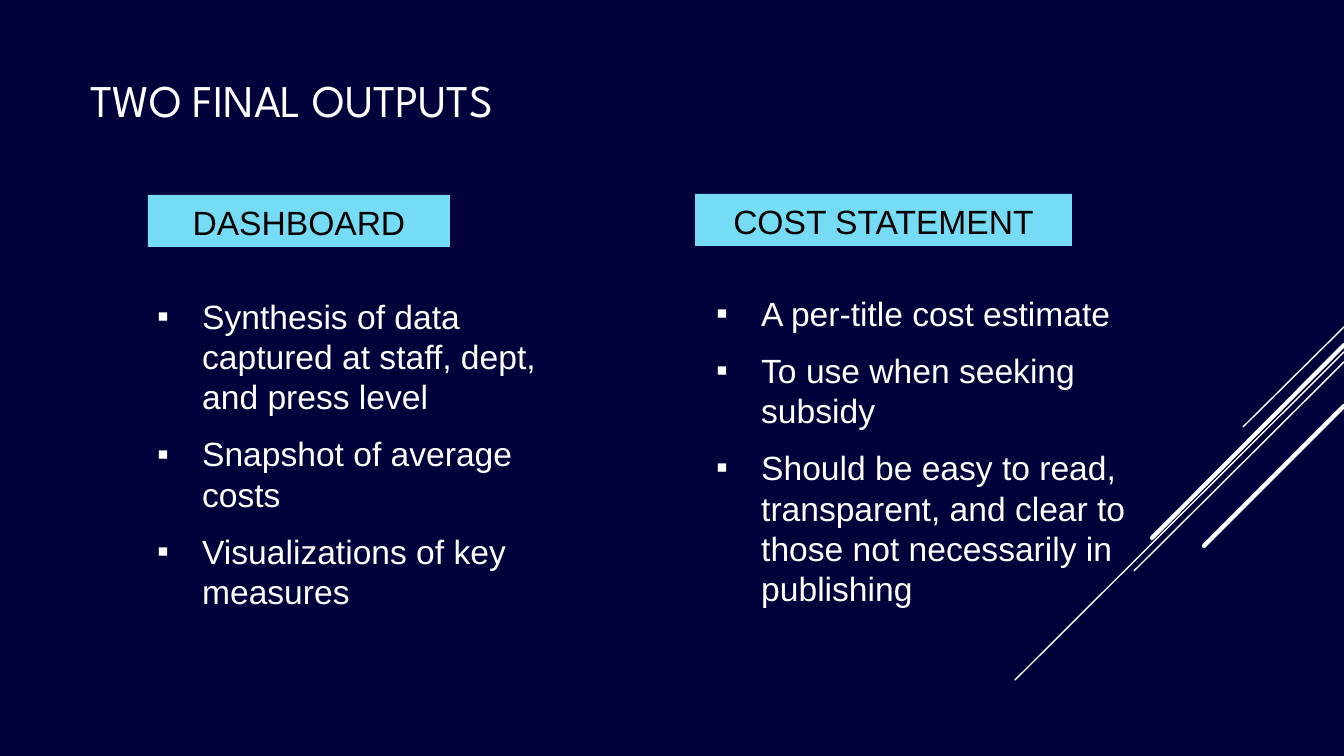
from pptx import Presentation
from pptx.util import Pt
from pptx.dml.color import RGBColor as Rgb
from pptx.enum.shapes import MSO_SHAPE as Shape, MSO_CONNECTOR as Link
from pptx.enum.text import PP_ALIGN as Align, MSO_ANCHOR as Anchor, MSO_AUTO_SIZE as Fit
from lxml.etree import SubElement as Sub
from pptx.oxml.ns import qn

SCALE = 914400 / 134.4
WHITE, BLACK, NAVY, SKY = "FFFFFF", "000000", "00003A", "76DBF4"


def px(*nums):
    return [round(n * SCALE) for n in nums]


def tint(code):
    return Rgb.from_string(code)


def put(item, form):
    for key, value in form.items():
        setattr(item, key, value)


class Deck:
    frame = {"word_wrap": True, "auto_size": Fit.NONE}
    body = {"name": "Arial", "size": Pt(18)}
    head = {"name": "League Spartan", "size": Pt(24.3)}

    def __init__(self, wide, high):
        self.show = Presentation()
        put(self.show, dict(zip(("slide_width", "slide_height"), px(wide, high))))
        self.slide = self.show.slides.add_slide(self.show.slide_layouts[6])
        fill = self.slide.background.fill
        fill.solid()
        fill.fore_color.rgb = tint(NAVY)

    def words(self, para, text, font, color):
        run = para.add_run()
        run.text = text
        put(run.font, font)
        run.font.color.rgb = tint(color)

    def line(self, ends, width):
        link = self.slide.shapes.add_connector(Link.STRAIGHT, *px(*ends))
        link.line.color.rgb = tint(WHITE)
        link.line.width = Pt(width)
        props = link._element.spPr
        props.find(qn("a:ln")).set("cap", "rnd")
        Sub(props, qn("a:effectLst"))

    def title(self, text, area, base):
        frame = self.slide.shapes.add_textbox(*px(*area)).text_frame
        put(frame, self.frame | {"vertical_anchor": Anchor.MIDDLE,
                                 "margin_bottom": px(base)[0]})
        self.words(frame.paragraphs[0], text, self.head, WHITE)

    def label(self, text, area):
        box = self.slide.shapes.add_shape(Shape.RECTANGLE, *px(*area))
        box.shadow.inherit = False
        box.fill.solid()
        box.fill.fore_color.rgb = tint(SKY)
        box.line.fill.background()
        put(box.text_frame, self.frame | {"vertical_anchor": Anchor.TOP})
        para = box.text_frame.paragraphs[0]
        para.alignment = Align.CENTER
        self.words(para, text, self.body, BLACK)

    def bullets(self, items, area):
        frame = self.slide.shapes.add_textbox(*px(*area)).text_frame
        put(frame, self.frame)
        for num, text in enumerate(items):
            para = frame.add_paragraph() if num else frame.paragraphs[0]
            put(para, {"level": 1, "line_spacing": 1.0,
                       "space_before": Pt(9 if num else 0)})
            props = para._p.get_or_add_pPr()
            left, hang = px(92, -45)
            props.set("marL", str(left))
            props.set("indent", str(hang))
            Sub(props, qn("a:buFont"), typeface="Arial")
            Sub(props, qn("a:buChar"), char="▪")
            self.words(para, text, self.body, WHITE)


def main():
    deck = Deck(1344, 756)
    edge = 1344
    for top, left, low, width in (
        (327, 1243, 427, 0.75),
        (352, 1015, 680, 0.75),
        (362, 1134, 571, 0.75),
        (345, 1152, 538, 2.25),
        (406, 1204, 546, 2.25),
    ):
        deck.line((edge, top, left, low), width)
    deck.title("TWO FINAL OUTPUTS", (77, 63, 1136, 120), 54)
    for name, area, items, spot in (
        ("DASHBOARD", (148, 195, 302, 52),
         ("Synthesis of data captured at staff, dept, and press level",
          "Snapshot of average costs",
          "Visualizations of key measures"), (97, 289, 512, 325)),
        ("COST STATEMENT", (695, 194, 377, 52),
         ("A per-title cost estimate",
          "To use when seeking subsidy",
          "Should be easy to read, transparent, and clear to those "
          "not necessarily in publishing"), (656, 286, 512, 325)),
    ):
        deck.bullets(items, spot)
        deck.label(name, area)
    deck.show.save("out.pptx")


if __name__ == "__main__":
    main()
